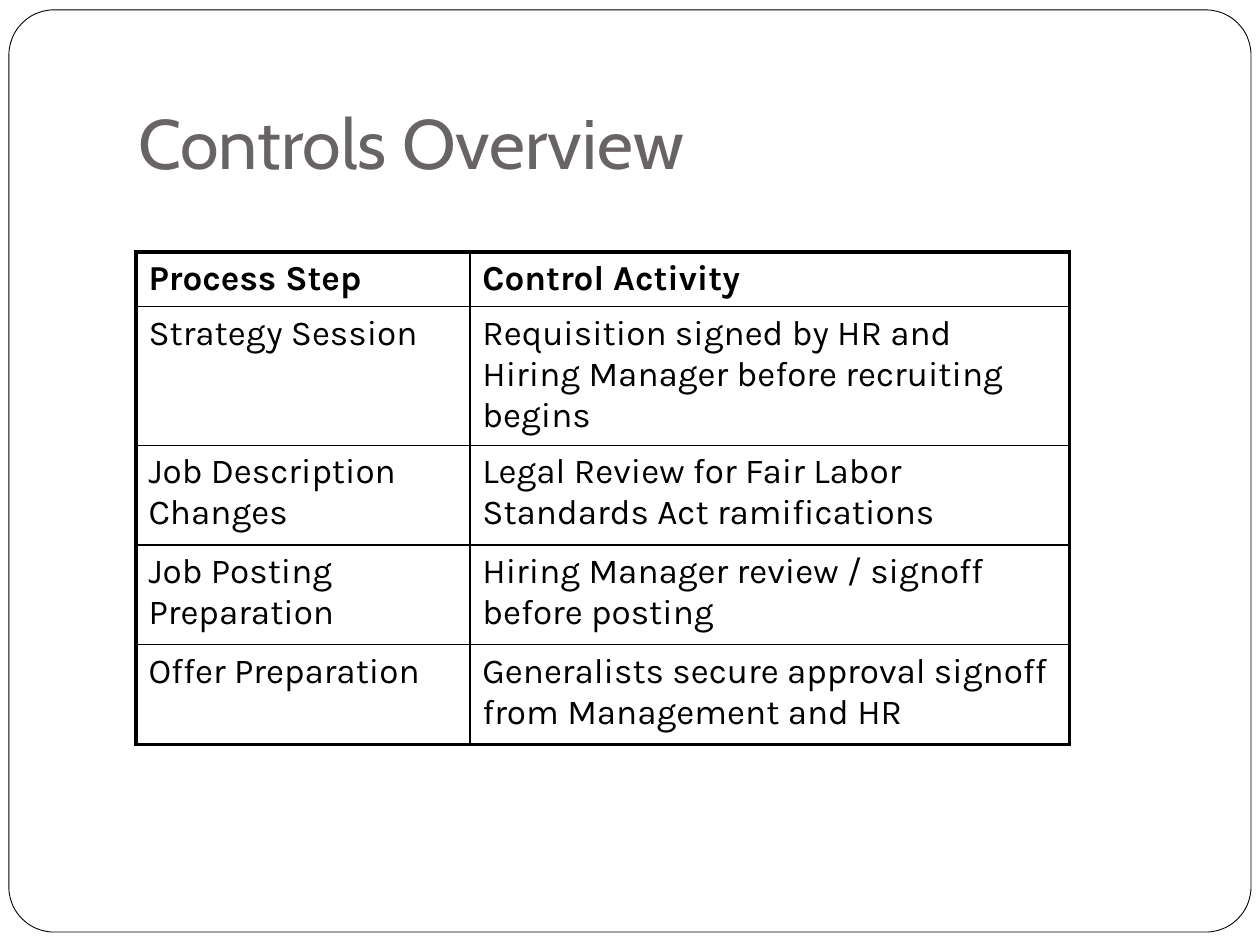
from lxml import etree
from pptx import Presentation
from pptx import util as u
from pptx.dml.color import RGBColor
from pptx.enum import shapes, text
from pptx.oxml.ns import qn

CONTROLS = [
    ("Process Step", "Control Activity"),
    ("Strategy Session",
     "Requisition signed by HR and Hiring Manager before recruiting begins"),
    ("Job Description Changes",
     "Legal Review for Fair Labor Standards Act ramifications"),
    ("Job Posting Preparation",
     "Hiring Manager review / signoff before posting"),
    ("Offer Preparation",
     "Generalists secure approval signoff from Management and HR"),
]


def color(hex_code):
    return RGBColor.from_string(hex_code)


def write(frame, words, font, size, ink, bold=False):
    """Put one formatted paragraph into a text frame."""
    frame.word_wrap = True
    run = frame.paragraphs[0].add_run()
    run.text = words
    run.font.name = font
    run.font.size = u.Pt(size)
    run.font.bold = bold
    run.font.color.rgb = color(ink)


def set_borders(cell, widths, ink):
    """Draw the cell borders; widths are points in left, right, top, bottom order."""
    properties = cell._tc.get_or_add_tcPr()
    for index, (side, width) in enumerate(zip("LRTB", widths)):
        line = etree.Element(qn(f"a:ln{side}"), w=str(u.Pt(width)))
        fill = etree.SubElement(line, qn("a:solidFill"))
        etree.SubElement(fill, qn("a:srgbClr"), val=ink)
        properties.insert(index, line)


class ControlsSlide:
    HEADING_FONT, BODY_FONT = "Cabin", "Karla"
    HEADING_INK, INK, PAPER = "696464", "000000", "FFFFFF"
    THIN, THICK = 1, 2.25

    def __init__(self, deck):
        self.slide = deck.slides.add_slide(deck.slide_layouts[6])

    def frame(self, left, top, width, height, corner):
        border = self.slide.shapes.add_shape(
            shapes.MSO_SHAPE.ROUNDED_RECTANGLE,
            u.Cm(left), u.Cm(top), u.Cm(width), u.Cm(height))
        border.adjustments[0] = corner
        border.shadow.inherit = False
        border.fill.solid()
        border.fill.fore_color.rgb = color(self.PAPER)
        border.line.color.rgb = color(self.INK)
        border.line.width = u.Pt(0.5)

    def heading(self, words, left, top, width, height):
        heading = self.slide.shapes.add_textbox(
            u.Cm(left), u.Cm(top), u.Cm(width), u.Cm(height)).text_frame
        heading.vertical_anchor = text.MSO_ANCHOR.BOTTOM
        heading.margin_bottom = u.Cm(0.25)
        write(heading, words, font=self.HEADING_FONT, size=40, ink=self.HEADING_INK)

    def table(self, rows, left, top, column_widths, header_height, row_height):
        heights = [header_height] + [row_height] * (len(rows) - 1)
        grid = self.slide.shapes.add_table(
            len(rows), len(column_widths), u.Cm(left), u.Cm(top),
            u.Cm(sum(column_widths)), u.Cm(sum(heights))).table
        grid.first_row = grid.horz_banding = False
        for column, width in zip(grid.columns, column_widths):
            column.width = u.Cm(width)
        for row, height in zip(grid.rows, heights):
            row.height = u.Cm(height)

        last_row, last_column = len(rows) - 1, len(column_widths) - 1
        for r, entries in enumerate(rows):
            for c, words in enumerate(entries):
                cell = grid.cell(r, c)
                cell.fill.background()
                write(cell.text_frame, words, font=self.BODY_FONT, size=20,
                      ink=self.INK, bold=r == 0)
                # Thick lines run only around the outside
                outer = (c == 0, c == last_column, r == 0, r == last_row)
                set_borders(cell, [self.THICK if edge else self.THIN for edge in outer],
                            self.INK)


def main():
    deck = Presentation()
    deck.slide_width, deck.slide_height = u.Cm(25.4), u.Cm(19.05)
    page = ControlsSlide(deck)

    # Page border
    page.frame(0.18, 0.2, 25.04, 18.59, corner=0.049)

    # Title
    page.heading("Controls Overview", 2.54, 0.76, 21.59, 3.18)

    # Process steps and their controls
    page.table(CONTROLS, 2.74, 5.08, column_widths=(6.73, 12.09),
               header_height=1.09, row_height=2.01)

    deck.save("out.pptx")


if __name__ == "__main__":
    main()
